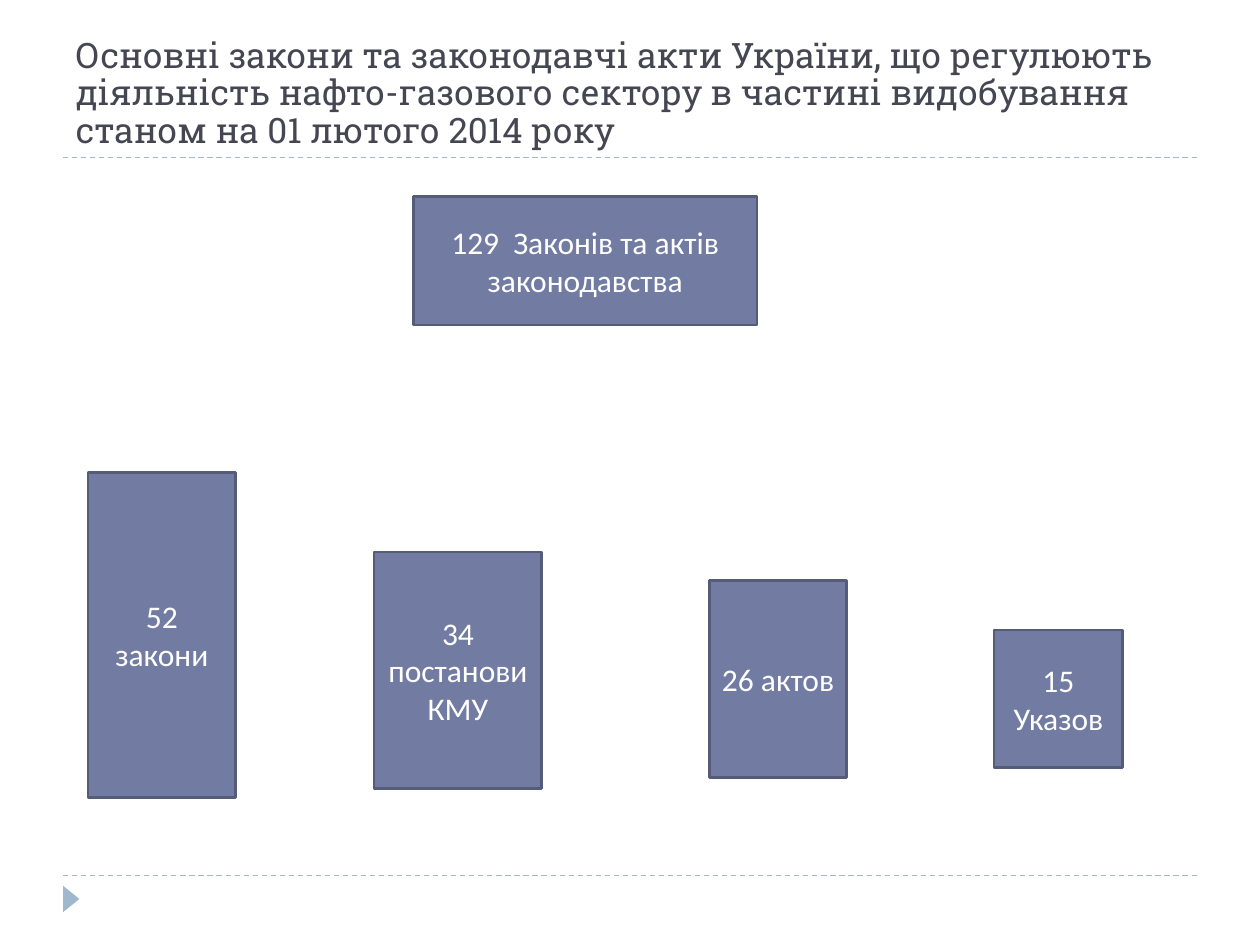
from lxml import etree
from pptx import Presentation
from pptx.dml.color import RGBColor
from pptx.enum.dml import MSO_LINE
from pptx.enum.shapes import MSO_CONNECTOR, MSO_SHAPE
from pptx.enum.text import MSO_ANCHOR, MSO_AUTO_SIZE, PP_ALIGN
from pptx.oxml.ns import qn
from pptx.util import Inches, Pt

WHITE = RGBColor(0xFF, 0xFF, 0xFF)
HEADING = RGBColor(0x46, 0x46, 0x53)
BOX_FILL = RGBColor(0x72, 0x7C, 0xA3)
BOX_EDGE = RGBColor(0x54, 0x5C, 0x79)
ACCENT = RGBColor(0x9F, 0xB8, 0xCD)

TITLE = ("Основні закони та законодавчі акти України, що регулюють діяльність "
         "нафто-газового сектору в частині видобування станом на 01 лютого 2014 року")
TOTAL = ("129  Законів та актів законодавства", (3.28, 1.56, 2.73, 1.02))
ACT_TYPES = [
    ("52 закони", (0.7, 3.75, 1.17, 2.58)),
    ("34 постанови КМУ", (2.97, 4.38, 1.33, 1.88)),
    ("26 актов", (5.63, 4.61, 1.09, 1.56)),
    ("15 Указов", (7.89, 5, 1.02, 1.09)),
]


def add_divider(slide, left, top, width):
    """Draw a dashed horizontal rule."""
    divider = slide.shapes.add_connector(
        MSO_CONNECTOR.STRAIGHT, Inches(left), Inches(top), Inches(left + width), Inches(top))
    divider.line.color.rgb = ACCENT
    divider.line.width = Pt(0.75)
    divider.line.dash_style = MSO_LINE.DASH
    etree.SubElement(divider.element.spPr, qn("a:effectLst"))


def add_footer_marker(slide, left, top, width, height):
    """Draw the right-pointing triangle under the footer rule."""
    marker = slide.shapes.add_shape(
        MSO_SHAPE.ISOSCELES_TRIANGLE, Inches(left), Inches(top), Inches(width), Inches(height))
    marker.rotation = 90
    marker.shadow.inherit = False
    marker.fill.solid()
    marker.fill.fore_color.rgb = ACCENT
    marker.line.fill.background()


def place_title(slide, left, top, width, height):
    """Place and format the title placeholder."""
    title = slide.shapes.title
    title.left, title.top = Inches(left), Inches(top)
    title.width, title.height = Inches(width), Inches(height)
    frame = title.text_frame
    frame.text = TITLE
    frame.word_wrap = True
    frame.auto_size = MSO_AUTO_SIZE.NONE
    frame.vertical_anchor = MSO_ANCHOR.BOTTOM
    heading = frame.paragraphs[0]
    heading.alignment = PP_ALIGN.LEFT
    heading.line_spacing = 0.9
    heading.font.name = "Roboto Slab"
    heading.font.size = Pt(20)
    heading.font.color.rgb = HEADING


def add_count_box(slide, label, left, top, width, height):
    """Add a filled box with a count of legal acts."""
    box = slide.shapes.add_shape(
        MSO_SHAPE.RECTANGLE, Inches(left), Inches(top), Inches(width), Inches(height))
    box.shadow.inherit = False
    box.fill.solid()
    box.fill.fore_color.rgb = BOX_FILL
    box.line.color.rgb = BOX_EDGE
    box.line.width = Pt(1.5)
    frame = box.text_frame
    frame.text = label
    frame.word_wrap = True
    frame.margin_left = frame.margin_right = Inches(0.09)
    frame.vertical_anchor = MSO_ANCHOR.MIDDLE
    caption = frame.paragraphs[0]
    caption.alignment = PP_ALIGN.CENTER
    caption.font.name = "Calibri"
    caption.font.size = Pt(18)
    caption.font.color.rgb = WHITE


def main():
    """Build and save the slide."""
    deck = Presentation()
    deck.slide_width, deck.slide_height = Inches(10), Inches(7.5)
    slide = deck.slides.add_slide(deck.slide_layouts[5])
    for divider_top in (6.95, 1.25):
        add_divider(slide, 0.5, divider_top, 9)
    add_footer_marker(slide, 0.46, 7.07, 0.21, 0.13)
    place_title(slide, 0.5, 0.25, 9, 1)
    for label, area in [TOTAL, *ACT_TYPES]:
        add_count_box(slide, label, *area)
    deck.save("out.pptx")


if __name__ == "__main__":
    main()
